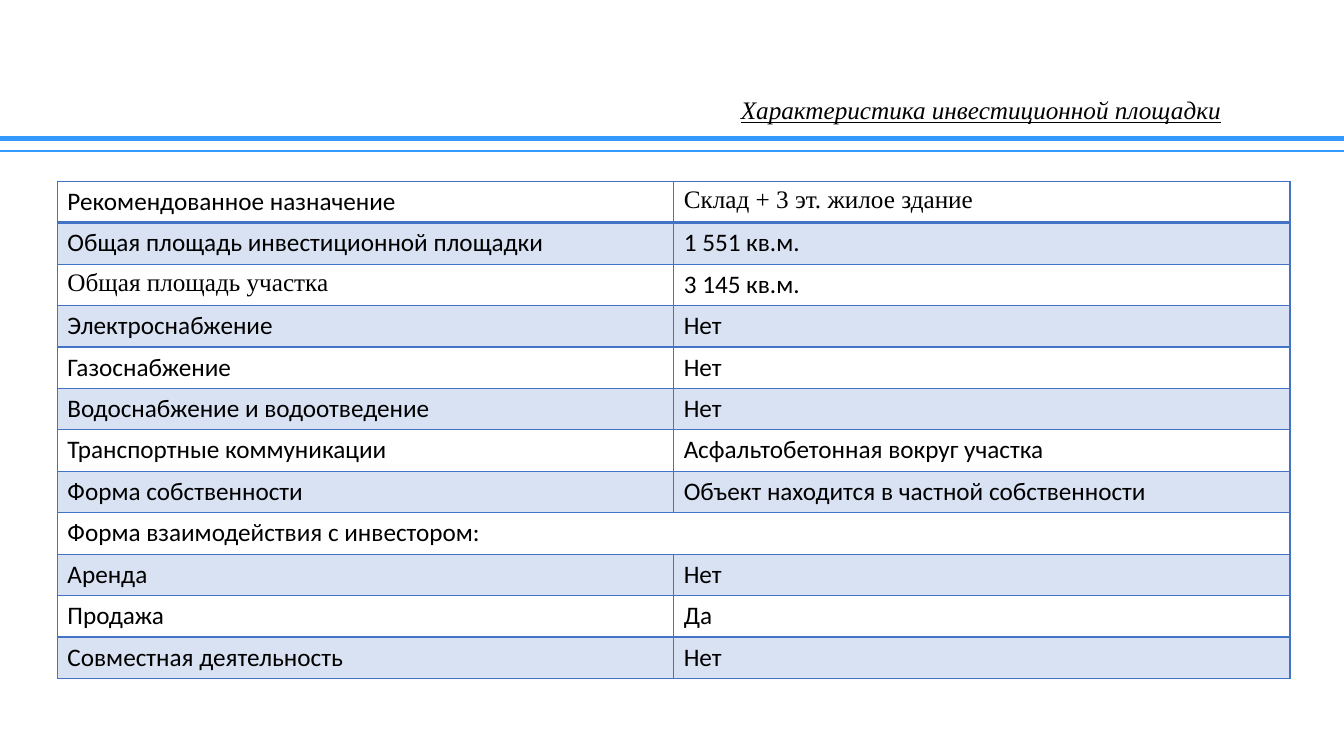
from lxml.etree import SubElement
from pptx import Presentation
from pptx.dml.color import RGBColor
from pptx.enum.shapes import MSO_CONNECTOR as Connector
from pptx.enum.text import MSO_ANCHOR as Anchor, PP_ALIGN as Align
from pptx.oxml.ns import qn
from pptx.util import Pt

BLUE, SKY, BLACK = "4472C4", "3399FF", "000000"
SANS, SERIF = "Calibri", "Times New Roman"
WIDTH, HEIGHT = 960, 540

# Table content; a missing value means the row is merged
FEATURES = [
    ("Рекомендованное назначение", "Склад + 3 эт. жилое здание"),
    ("Общая площадь инвестиционной площадки", "1 551 кв.м."),
    ("Общая площадь участка", "3 145 кв.м."),
    ("Электроснабжение", "Нет"),
    ("Газоснабжение", "Нет"),
    ("Водоснабжение и водоотведение", "Нет"),
    ("Транспортные коммуникации", "Асфальтобетонная вокруг участка"),
    ("Форма собственности", "Объект находится в частной собственности"),
    ("Форма взаимодействия с инвестором:", None),
    ("Аренда", "Нет"),
    ("Продажа", "Да"),
    ("Совместная деятельность", "Нет"),
]
SERIF_CELLS = {(0, 1), (2, 0)}


def rgb(value):
    return RGBColor.from_string(value)


class SiteSlide:
    def __init__(self, slide):
        self.slide = slide
        self.text_format = {"name": SANS, "size": Pt(18), "bold": False}

    def style(self, font, **changes):
        for key, value in {**self.text_format, **changes}.items():
            setattr(font, key, value)
        font.color.rgb = rgb(BLACK)

    def rule(self, top, weight):
        line = self.slide.shapes.add_connector(
            Connector.STRAIGHT, 0, Pt(top), Pt(WIDTH), Pt(top))
        line.line.color.rgb = rgb(SKY)
        line.line.width = Pt(weight)
        SubElement(line._element.spPr, qn("a:effectLst"))

    def title(self, text, left, top, width, height):
        heading = self.slide.shapes.title
        box = {"left": left, "top": top, "width": width, "height": height}
        for key, value in box.items():
            setattr(heading, key, Pt(value))
        frame = heading.text_frame
        frame.text = text
        frame.word_wrap = True
        frame.vertical_anchor = Anchor.MIDDLE
        paragraph = frame.paragraphs[0]
        paragraph.alignment = Align.CENTER
        paragraph.line_spacing = 0.9
        self.style(paragraph.runs[0].font, name=SERIF, italic=True, underline=True)

    def borders(self, cell, bottom):
        properties = cell._tc.get_or_add_tcPr()
        weights = {"a:lnL": 1, "a:lnR": 1, "a:lnT": 1, "a:lnB": bottom}
        for position, (side, weight) in enumerate(weights.items()):
            line = properties.makeelement(qn(side), {"w": str(Pt(weight))})
            fill = SubElement(line, qn("a:solidFill"))
            SubElement(fill, qn("a:srgbClr"), val=BLUE)
            properties.insert(position, line)

    def shade(self, cell, banded):
        if not banded:
            cell.fill.background()
            return
        cell.fill.solid()
        cell.fill.fore_color.rgb = rgb(BLUE)
        colour = cell._tc.tcPr.find(".//" + qn("a:srgbClr"))
        SubElement(colour, qn("a:alpha"), val="20000")

    def table(self, rows, left, top, width, row_height):
        table = self.slide.shapes.add_table(
            len(rows), 2, Pt(left), Pt(top), Pt(width),
            Pt(row_height * len(rows))).table
        table.first_row = table.horz_banding = False
        for row, values in enumerate(rows):
            table.rows[row].height = Pt(row_height)
            for column, text in enumerate(values):
                cell = table.cell(row, column)
                self.shade(cell, row % 2 == 1)
                self.borders(cell, 2 if row == 0 else 1)
                if text is None:
                    table.cell(row, 0).merge(cell)
                    continue
                cell.text = text
                face = SERIF if (row, column) in SERIF_CELLS else SANS
                self.style(cell.text_frame.paragraphs[0].runs[0].font, name=face)


def main():
    deck = Presentation()
    deck.slide_width, deck.slide_height = Pt(WIDTH), Pt(HEIGHT)
    site = SiteSlide(deck.slides.add_slide(deck.slide_layouts[5]))

    # Header
    site.rule(99.2, 3.5)
    site.rule(108, 1.5)
    site.title("Характеристика инвестиционной площадки", 480, 70, 441.5, 19.5)

    # Site characteristics
    site.table(FEATURES, 41, 129.5, 880.5, 29.6)
    deck.save("out.pptx")


if __name__ == "__main__":
    main()
